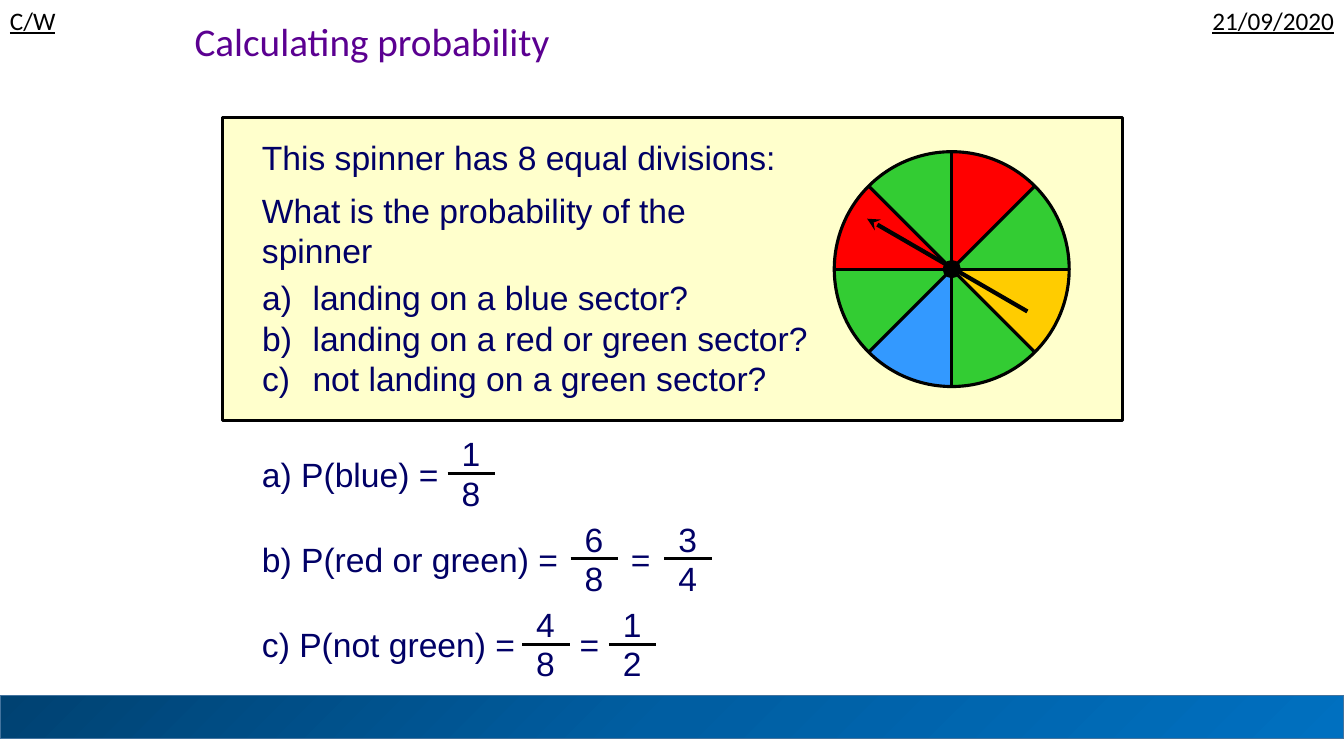
import copy
import math

import pptx
import pptx.chart.data
import pptx.dml.color
import pptx.enum.shapes
import pptx.enum.text
import pptx.oxml.ns
import pptx.util
from lxml import etree
from pptx.util import Inches

SHAPE = pptx.enum.shapes.MSO_SHAPE
ALIGN = pptx.enum.text.PP_ALIGN
ANCHOR = pptx.enum.text.MSO_ANCHOR
FIT = pptx.enum.text.MSO_AUTO_SIZE
qn = pptx.oxml.ns.qn


def colour(value):
    return pptx.dml.color.RGBColor.from_string(value)


def write(para, text, size=24, font="Arial", ink="010066", underline=None, align=ALIGN.LEFT):
    para.alignment = align
    span = para.add_run()
    span.text = text
    span.font.size = pptx.util.Pt(size)
    span.font.name = font
    span.font.underline = underline
    span.font.color.rgb = colour(ink)


class ProbabilitySlide:
    black = "000000"
    line_width = 2.25

    def __init__(self, deck):
        self.slide = deck.slides.add_slide(deck.slide_layouts[1])
        self.shapes = self.slide.shapes

    def place(self, shape, left, top, width, height):
        shape.left, shape.top = Inches(left), Inches(top)
        shape.width, shape.height = Inches(width), Inches(height)

    def title(self, text, *bounds):
        box = self.shapes.title
        self.place(box, *bounds)
        frame = box.text_frame
        frame.vertical_anchor = ANCHOR.TOP
        frame.auto_size = FIT.NONE
        frame.paragraphs[0].line_spacing = 0.9
        write(frame.paragraphs[0], text, size=28, font="Calibri", ink="5B0091")

    def lettered_list(self, items, *bounds):
        box = self.slide.placeholders[1]
        self.place(box, *bounds)
        box.element.getparent().append(box.element)  # bring in front of the panel
        frame = box.text_frame
        frame.auto_size = FIT.NONE
        for index, item in enumerate(items):
            para = frame.add_paragraph() if index else frame.paragraphs[0]
            para.space_before = pptx.util.Pt(0)
            write(para, item)
            properties = para._p.get_or_add_pPr()
            properties.set("marL", str(Inches(0.5)))
            properties.set("indent", str(Inches(-0.5)))
            etree.SubElement(properties, qn("a:buAutoNum"), type="alphaLcParenR")

    def text(self, text, left, top, width, height=0.5, wrap=False, **style):
        box = self.shapes.add_textbox(*map(Inches, (left, top, width, height)))
        box.text_frame.word_wrap = wrap
        box.text_frame.auto_size = FIT.SHAPE_TO_FIT_TEXT
        write(box.text_frame.paragraphs[0], text, **style)

    def shape(self, kind, left, top, width, height, fill=None, line=black, weight=line_width):
        shape = self.shapes.add_shape(kind, *map(Inches, (left, top, width, height)))
        shape.shadow.inherit = False
        if fill:
            shape.fill.solid()
            shape.fill.fore_color.rgb = colour(fill)
        else:
            shape.fill.background()
        shape.line.color.rgb = colour(line)
        shape.line.width = pptx.util.Pt(weight)
        return shape

    def gradient_bar(self, colours, *bounds):
        bar = self.shape(SHAPE.RECTANGLE, *bounds, line="43739E", weight=1)
        bar.fill.gradient()
        bar.fill.gradient_angle = 315
        first = bar.fill._fill._gradFill.find(qn("a:gsLst"))[0]
        first.addnext(copy.deepcopy(first))
        for index, (stop, value) in enumerate(zip(bar.fill.gradient_stops, colours)):
            stop.color.rgb = colour(value)
            stop.position = index / (len(colours) - 1)

    def line(self, start, end, weight=line_width, arrow=False):
        line = self.shapes.add_connector(
            pptx.enum.shapes.MSO_CONNECTOR.STRAIGHT, *map(Inches, (*start, *end)))
        line.line.color.rgb = colour(self.black)
        line.line.width = pptx.util.Pt(weight)
        if arrow:
            etree.SubElement(line.line._get_or_add_ln(), qn("a:tailEnd"), type="stealth")
        etree.SubElement(line.element.spPr, qn("a:effectLst"))

    def sector(self, centre, radius, start, sweep, fill):
        rim = [on_rim(centre, radius, start + sweep * step / 15) for step in range(16)]
        points = [tuple(map(Inches, point)) for point in rim]
        builder = self.shapes.build_freeform(Inches(centre[0]), Inches(centre[1]))
        builder.add_line_segments(points, close=True)
        sector = builder.convert_to_shape()
        sector.shadow.inherit = False
        sector.fill.solid()
        sector.fill.fore_color.rgb = colour(fill)
        sector.line.fill.background()

    def spinner(self, centre, radius, colours):
        sweep = 360 / len(colours)
        for index, fill in enumerate(colours):
            self.sector(centre, radius, index * sweep, sweep, fill)
        self.disc(centre, radius)
        self.disc(centre, 0.085, fill=self.black, weight=0.75)
        for index in range(len(colours) // 2):
            angle = index * sweep
            self.line(on_rim(centre, radius, angle), on_rim(centre, radius, angle + 180))
        self.line((10.19, 3.09), (8.6, 2.17), weight=3, arrow=True)

    def disc(self, centre, radius, **style):
        self.shape(SHAPE.OVAL, centre[0] - radius, centre[1] - radius,
                   2 * radius, 2 * radius, **style)

    def fraction(self, top, bottom, left, bar):
        self.text(top, left + 0.04, bar - 0.45, 0.39)
        self.line((left, bar), (left + 0.47, bar))
        self.text(bottom, left + 0.04, bar - 0.06, 0.39)


def on_rim(centre, radius, degrees):
    """Point on a circle, measured clockwise from the top."""
    angle = math.radians(degrees)
    return centre[0] + radius * math.sin(angle), centre[1] - radius * math.cos(angle)


def main():
    deck = pptx.Presentation()
    deck.slide_width, deck.slide_height = Inches(13.33), Inches(7.5)
    page = ProbabilitySlide(deck)

    # Header and footer
    header = dict(size=18, font="Calibri", ink="000000", underline=True, wrap=True)
    page.text("C/W", 0, 0, 1.55, 0.4, **header)
    page.text("21/09/2020", 11.78, 0, 1.55, 0.4, align=ALIGN.RIGHT, **header)
    page.gradient_bar(("004272", "005EA2", "0070C0"), 0, 6.9, 13.33, 0.43)
    page.title("Calculating probability", 1.83, 0.17, 5.54, 0.58)

    # Question panel
    page.shape(SHAPE.RECTANGLE, 2.21, 1.17, 8.92, 3, fill="FFFFCC")
    page.text("This spinner has 8 equal divisions:", 2.5, 1.31, 7.7, wrap=True)
    page.text("What is the probability of the spinner", 2.5, 1.83, 5.42, 0.91, wrap=True)
    page.lettered_list(("landing on a blue sector?",
                        "landing on a red or green sector?",
                        "not landing on a green sector?"), 2.5, 2.7, 6.21, 1.32)

    # Spinner, clockwise from the top
    red, green, yellow, blue = "FF0000", "33CC33", "FFCC00", "3399FF"
    page.spinner((9.44, 2.67), 1.165,
                 (red, green, yellow, green, blue, green, red, green))

    # Answers: label, label width, fractions with their left edges, second equals sign
    answers = (
        ("a) P(blue) =", 1.95, (("1", "8", 4.44),), None),
        ("b) P(red or green) =", 3.14, (("6", "8", 5.66), ("3", "4", 6.59)), 6.16),
        ("c) P(not green) =", 2.71, (("4", "8", 5.18), ("1", "2", 6.04)), 5.65),
    )
    for row, (label, width, fractions, equals) in enumerate(answers):
        bar = 4.7 + 0.845 * row
        page.text(label, 2.5, bar - 0.25, width)
        for top, bottom, left in fractions:
            page.fraction(top, bottom, left, bar)
        if equals:
            page.text("=", equals, bar - 0.25, 0.4)

    deck.save("out.pptx")


if __name__ == "__main__":
    main()
